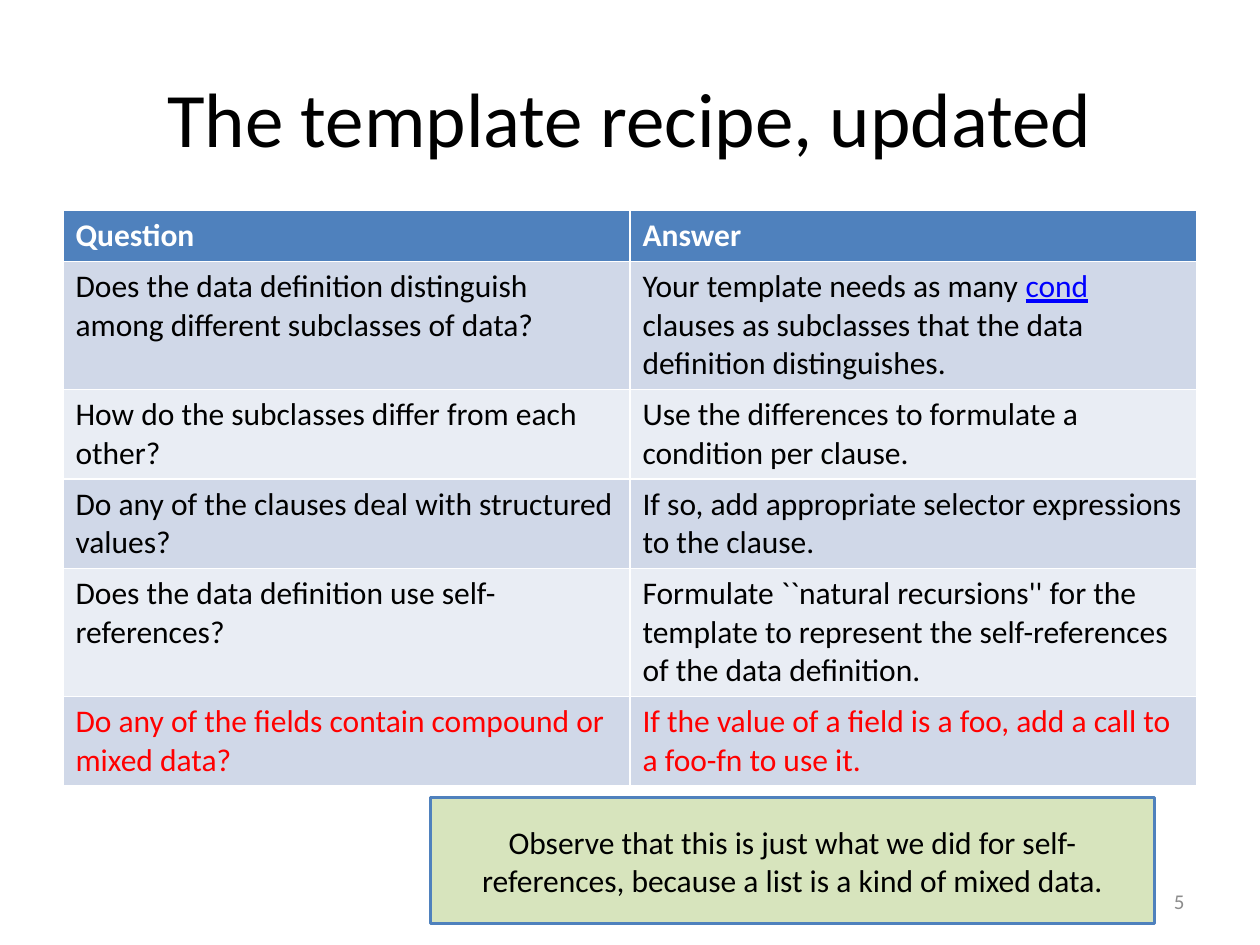
"""Build the slide with the updated template recipe."""
from pptx import Presentation
from pptx.dml.color import RGBColor
from pptx.enum.shapes import MSO_SHAPE
from pptx.enum.text import MSO_ANCHOR, PP_ALIGN
from pptx.util import Cm, Pt

FONT = "Calibri"
COLORS = {
    "text": "000000",
    "header_text": "FFFFFF",
    "link": "0000FF",
    "new": "FF0000",
    "number": "8C8C8C",
    "accent": "4F81BD",
    "dark_band": "D0D8E8",
    "light_band": "E9EDF4",
    "note": "D7E4BD",
}
TITLE = "The template recipe, updated"
HEADER = ("Question", "Answer")
RECIPE = [
    ("Does the data definition distinguish among different subclasses of data?",
     [("Your template needs as many ", "text"), ("cond", "link"),
      (" clauses as subclasses that the data definition distinguishes.", "text")]),
    ("How do the subclasses differ from each other?",
     "Use the differences to formulate a condition per clause."),
    ("Do any of the clauses deal with structured values?",
     "If so, add appropriate selector expressions to the clause."),
    ("Does the data definition use self-references?",
     "Formulate ``natural recursions'' for the template to represent "
     "the self-references of the data definition."),
    ([("Do any of the fields contain compound or mixed data?", "new")],
     [("If the value of a field is a foo, add a call to a foo-fn to use it.", "new")]),
]
NOTE = ("Observe that this is just what we did for self-references, "
        "because a list is a kind of mixed data.")
NUMBER = "5"
MARGIN, CONTENT_WIDTH, ROW_HEIGHT = 1.27, 22.86, 1.03


def color(name):
    return RGBColor.from_string(COLORS[name])


def write(frame, content, size=18, ink="text", bold=False, align=None, anchor=None):
    frame.word_wrap = True
    if anchor is not None:
        frame.vertical_anchor = anchor
    paragraph = frame.paragraphs[0]
    paragraph.alignment = align
    runs = [(content, ink)] if isinstance(content, str) else content
    for text, name in runs:
        run = paragraph.add_run()
        run.text = text
        run.font.name = FONT
        run.font.size = Pt(size)
        run.font.bold = bold
        run.font.color.rgb = color(name)
        if name == "link":
            run.font.underline = True


def add_title(slide):
    title = slide.shapes.title
    title.left, title.top = Cm(MARGIN), Cm(0.76)
    title.width, title.height = Cm(CONTENT_WIDTH), Cm(3.18)
    write(title.text_frame, TITLE, 44, align=PP_ALIGN.CENTER, anchor=MSO_ANCHOR.MIDDLE)


def add_recipe(slide):
    rows = [HEADER, *RECIPE]
    table = slide.shapes.add_table(
        len(rows), len(HEADER), Cm(MARGIN), Cm(4.24),
        Cm(CONTENT_WIDTH), Cm(ROW_HEIGHT * len(rows))).table
    for row_index, row in enumerate(rows):
        is_header = row_index == 0
        band = "dark_band" if row_index % 2 else "light_band"
        for column_index, content in enumerate(row):
            cell = table.cell(row_index, column_index)
            cell.fill.solid()
            cell.fill.fore_color.rgb = color("accent" if is_header else band)
            write(cell.text_frame, content,
                  ink="header_text" if is_header else "text", bold=is_header)


def add_note(slide):
    note = slide.shapes.add_shape(
        MSO_SHAPE.RECTANGLE, Cm(8.68), Cm(16.08), Cm(14.6), Cm(2.54))
    note.shadow.inherit = False
    note.fill.solid()
    note.fill.fore_color.rgb = color("note")
    note.line.color.rgb = color("accent")
    note.line.width = Pt(2)
    write(note.text_frame, NOTE, align=PP_ALIGN.CENTER, anchor=MSO_ANCHOR.MIDDLE)


def add_number(slide):
    number = slide.shapes.add_textbox(Cm(18.2), Cm(17.65), Cm(5.93), Cm(1.02))
    write(number.text_frame, NUMBER, 12, "number",
          align=PP_ALIGN.RIGHT, anchor=MSO_ANCHOR.MIDDLE)


def main():
    presentation = Presentation()
    presentation.slide_width, presentation.slide_height = Cm(25.4), Cm(19.05)
    slide = presentation.slides.add_slide(presentation.slide_layouts[5])
    add_title(slide)
    add_recipe(slide)
    add_note(slide)
    add_number(slide)
    presentation.save("out.pptx")


if __name__ == "__main__":
    main()
